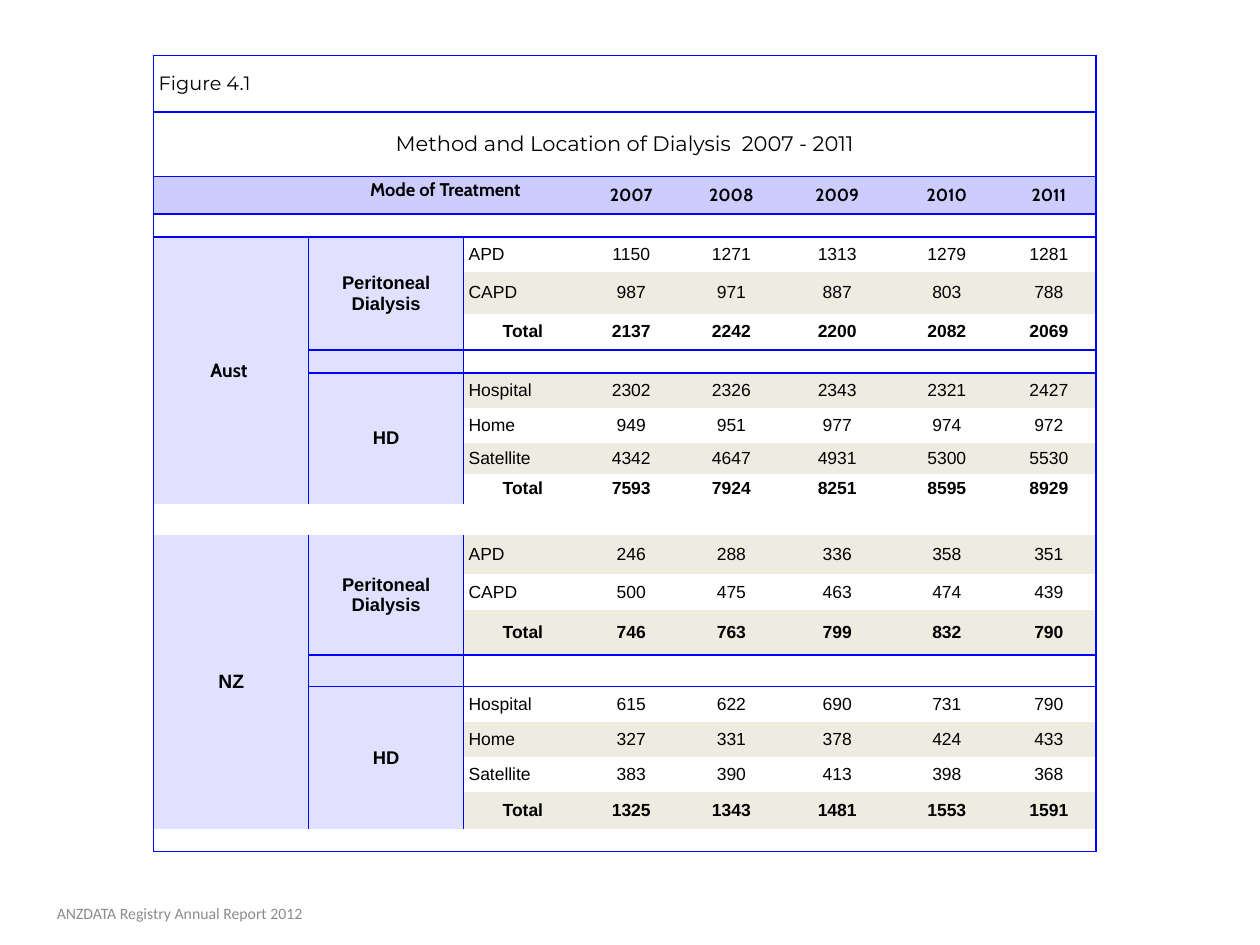
from lxml import etree
from pptx import Presentation
from pptx.dml.color import RGBColor
from pptx.enum.text import MSO_ANCHOR as ANCHOR, PP_ALIGN as ALIGN
from pptx.oxml.ns import qn
from pptx.util import Inches, Pt

COLORS = {"line": "0000FF", "header": "CCCCFF", "group": "E1E1FF",
          "band": "EEECE1", "text": "000000", "footer": "8C8C8C"}
NO_GRID_STYLE = "{2D5ABB26-0587-4C30-8999-92F81FD0307C}"

COL_WIDTHS = [1.23, 1.23, 0.94, 0.78, 0.81, 0.87, 0.87, 0.75]
ROW_HEIGHTS = [0.45, 0.51, 0.3, 0.18, 0.28, 0.33, 0.29, 0.18, 0.28, 0.28, 0.24,
               0.24, 0.25, 0.31, 0.28, 0.36, 0.25, 0.28, 0.28, 0.28, 0.29, 0.18]
LAST_ROW, LAST_COL = len(ROW_HEIGHTS) - 1, len(COL_WIDTHS) - 1
YEARS = ["2007", "2008", "2009", "2010", "2011"]

# Country, font, first row, then peritoneal dialysis rows and HD rows
COUNTRIES = [
    ("Aust ", "Cabin", 4,
     [("APD", 1150, 1271, 1313, 1279, 1281),
      ("CAPD", 987, 971, 887, 803, 788),
      ("Total", 2137, 2242, 2200, 2082, 2069)],
     [("Hospital", 2302, 2326, 2343, 2321, 2427),
      ("Home", 949, 951, 977, 974, 972),
      ("Satellite", 4342, 4647, 4931, 5300, 5530),
      ("Total", 7593, 7924, 8251, 8595, 8929)]),
    ("NZ", "Arial", 13,
     [("APD", 246, 288, 336, 358, 351),
      ("CAPD", 500, 475, 463, 474, 439),
      ("Total", 746, 763, 799, 832, 790)],
     [("Hospital", 615, 622, 690, 731, 790),
      ("Home", 327, 331, 378, 424, 433),
      ("Satellite", 383, 390, 413, 398, 368),
      ("Total", 1325, 1343, 1481, 1553, 1591)]),
]


class Deck:
    """Holds the style and the current slide."""

    def __init__(self, prs):
        self.slide = prs.slides.add_slide(prs.slide_layouts[6])

    def run(self, p, text, size, font, bold=False, color="text", align=ALIGN.CENTER):
        p.alignment = align
        r = p.add_run()
        r.text = text
        r.font.size, r.font.name, r.font.bold = Pt(size), font, bold
        r.font.color.rgb = RGBColor.from_string(COLORS[color])

    def text(self, x, y, w, h, text, size, font, color):
        tf = self.slide.shapes.add_textbox(
            Inches(x), Inches(y), Inches(w), Inches(h)).text_frame
        tf.word_wrap, tf.vertical_anchor = True, ANCHOR.MIDDLE
        self.run(tf.paragraphs[0], text, size, font, color=color)

    def table(self, x, y):
        s = self.slide.shapes.add_table(
            len(ROW_HEIGHTS), len(COL_WIDTHS), Inches(x), Inches(y),
            Inches(sum(COL_WIDTHS)), Inches(sum(ROW_HEIGHTS)))
        next(s._element.iter(qn("a:tableStyleId"))).text = NO_GRID_STYLE
        tbl = s.table
        tbl.first_row = tbl.horz_banding = False
        for col, width in zip(tbl.columns, COL_WIDTHS):
            col.width = Inches(width)
        for row, height in zip(tbl.rows, ROW_HEIGHTS):
            row.height = Inches(height)
        return tbl

    def cell(self, cell, lines, size, font="Arial", bold=False,
             align=ALIGN.CENTER, anchor=ANCHOR.MIDDLE, after=None):
        cell.vertical_anchor = anchor
        tf = cell.text_frame
        for i, line in enumerate(lines):
            p = tf.add_paragraph() if i else tf.paragraphs[0]
            if after:
                p.space_after = Pt(after)
            self.run(p, line, size, font, bold, align=align)

    def frame(self, cell, sides):
        """Set margins and borders, and keep empty cells low."""
        cell.margin_left = cell.margin_right = Inches(0.04)
        cell.margin_top = cell.margin_bottom = Inches(0.02)
        tc_pr = cell._tc.get_or_add_tcPr()
        for i, side in enumerate(s for s in "LRTB" if s in sides):
            ln = etree.Element(qn(f"a:ln{side}"), w=str(Pt(1)))
            fill = etree.SubElement(ln, qn("a:solidFill"))
            etree.SubElement(fill, qn("a:srgbClr"), val=COLORS["line"])
            tc_pr.insert(i, ln)
        if not cell.text_frame.text:
            p = cell.text_frame.paragraphs[0]
            etree.SubElement(p._p, qn("a:endParaRPr"), sz="600")

    def fill(self, cell, color):
        if color:
            cell.fill.solid()
            cell.fill.fore_color.rgb = RGBColor.from_string(COLORS[color])
        else:
            cell.fill.background()


def border_sides(row, col):
    """Sides of a cell that carry a line."""
    starts = [c[2] for c in COUNTRIES]
    in_country = any(top <= row < top + 8 for top in starts)
    sides = set()
    if col == 0 or (col == 1 and in_country):
        sides.add("L")
    if col == LAST_COL or (col == 0 and (in_country or row < 2)):
        sides.add("R")
    if row <= 3 or (col and row - 3 in starts):
        sides.add("T")
    if row <= 2 or row == LAST_ROW or (col and row - 2 in starts) \
            or (col == 1 and row in starts):
        sides.add("B")
    return sides


def build_table(deck):
    tbl = deck.table(1.22, 0.44)
    fills = {}

    # Title and header rows
    for row, text, size, align in [
            (0, "Figure 4.1", 11, ALIGN.LEFT),
            (1, "Method and Location of Dialysis  2007 - 2011", 12, ALIGN.CENTER)]:
        tbl.cell(row, 0).merge(tbl.cell(row, LAST_COL))
        deck.cell(tbl.cell(row, 0), [text], size, "Montserrat", align=align)
    tbl.cell(2, 1).merge(tbl.cell(2, 2))
    deck.cell(tbl.cell(2, 1), ["Mode of Treatment"], 10.5, "Cabin", True,
              anchor=ANCHOR.TOP)
    for col, year in enumerate(YEARS, 3):
        deck.cell(tbl.cell(2, col), [year], 10, "Cabin", True)
    fills.update({(2, col): "header" for col in range(LAST_COL + 1)})

    # Country blocks, with every second data row banded
    banded = False
    for country, font, top, peritoneal, hd in COUNTRIES:
        for col, first, last, lines, size, face in [
                (0, top, top + 7, [country], 11, font),
                (1, top, top + 2, ["Peritoneal", "Dialysis"], 10.5, "Arial"),
                (1, top + 4, top + 7, ["HD"], 10.5, "Arial")]:
            tbl.cell(first, col).merge(tbl.cell(last, col))
            deck.cell(tbl.cell(first, col), lines, size, face, True)
        fills.update({(top + i, col): "group" for i in range(8) for col in (0, 1)})
        for start, records in [(top, peritoneal), (top + 4, hd)]:
            for row, record in enumerate(records, start):
                total = record[0] == "Total"
                for col, value in enumerate(record, 2):
                    left = col == 2 and not total
                    deck.cell(tbl.cell(row, col), [str(value)], 10, bold=total,
                              align=ALIGN.LEFT if left else ALIGN.CENTER, after=14)
                    fills[row, col] = "band" if banded else None
                banded = not banded

    # Borders and fills
    for row in range(LAST_ROW + 1):
        for col in range(LAST_COL + 1):
            cell = tbl.cell(row, col)
            deck.frame(cell, border_sides(row, col))
            deck.fill(cell, fills.get((row, col)))


def main():
    prs = Presentation()
    prs.slide_width, prs.slide_height = Inches(10), Inches(7.5)
    deck = Deck(prs)
    build_table(deck)
    # Footer
    deck.text(-0.04, 7.05, 2.93, 0.4, "ANZDATA Registry Annual Report 2012",
              9, "Calibri", "footer")
    prs.save("out.pptx")


if __name__ == "__main__":
    main()
